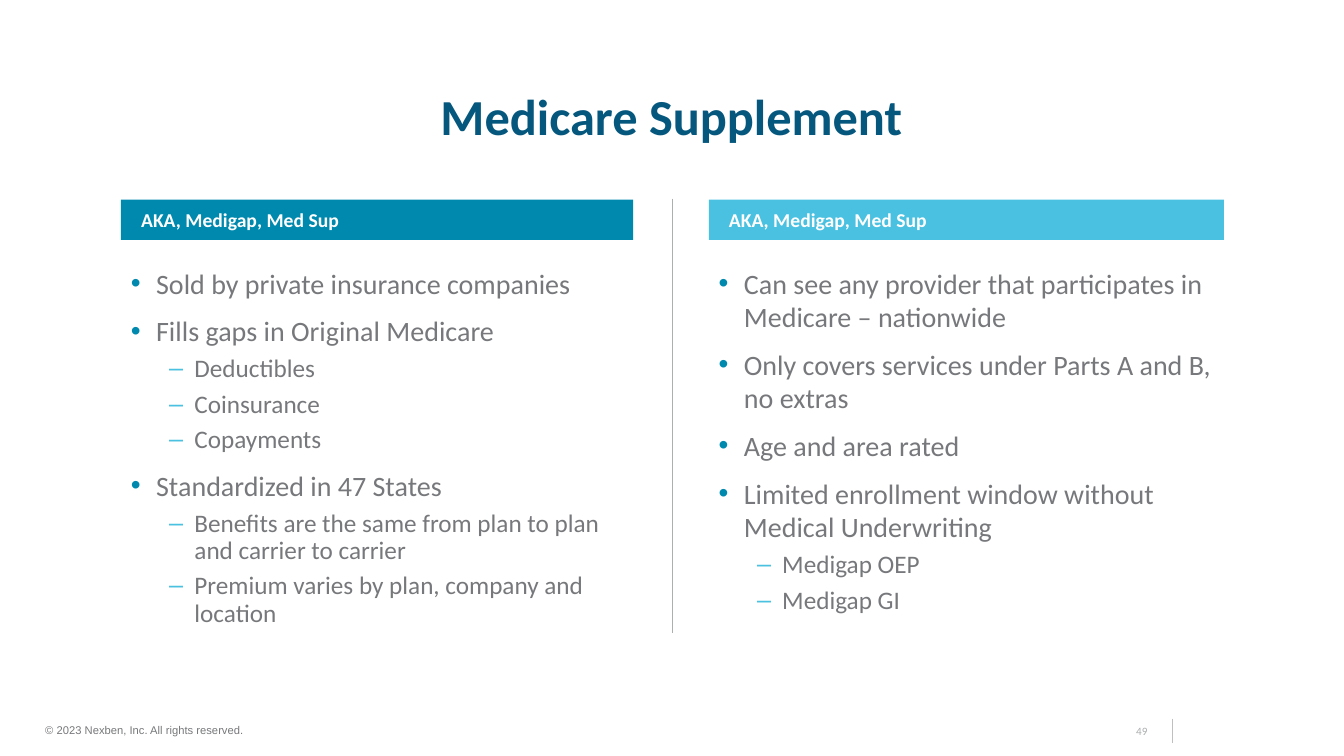
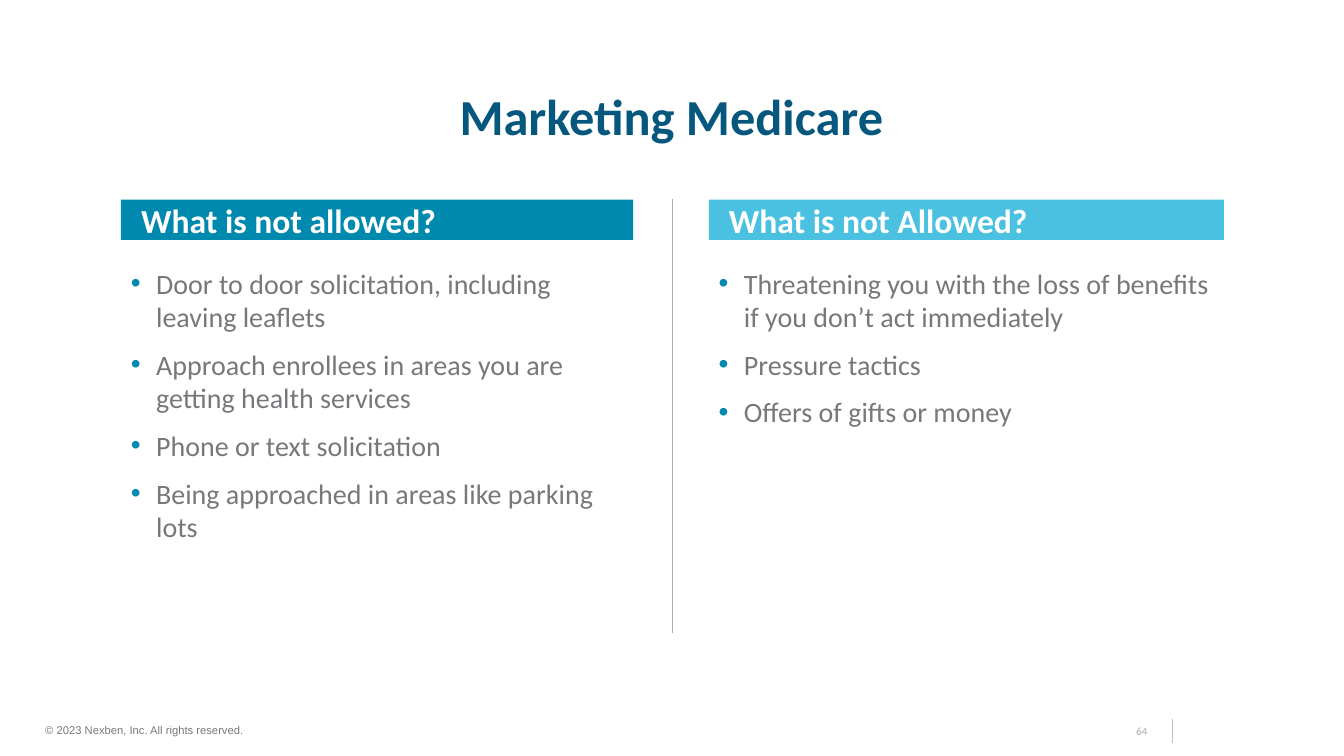
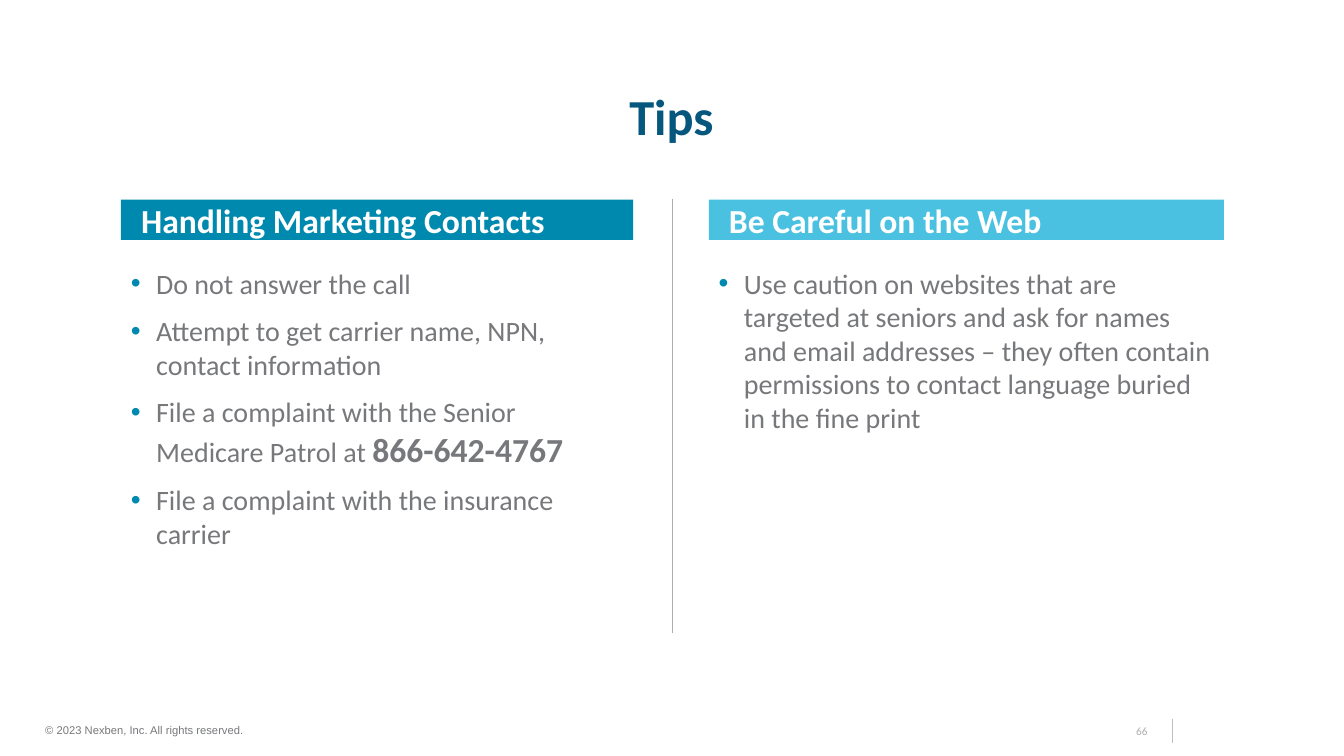
from lxml.etree import SubElement
from pptx import Presentation
from pptx.dml.color import RGBColor
from pptx.enum.shapes import MSO_CONNECTOR, MSO_SHAPE
from pptx.enum.text import MSO_ANCHOR, PP_ALIGN
from pptx.oxml.ns import qn
from pptx.util import Emu, Pt

PX = 9144  # EMU per px, 100 px to the inch

COLORS = {
    "title": "05577D",
    "left": "0089AE",
    "right": "4AC1E0",
    "body": "77787B",
    "divider": "ADAEB0",
    "footer rule": "BFBFBF",
    "white": "FFFFFF",
}

# Column x and width
COLUMNS = {"left": (120, 508), "right": (703, 511)}

# Bullet levels: character, colour, left margin, text size, paragraph format
LEVELS = [
    ("•", "left", 25, 20, {"space_before": Pt(10)}),
    ("–", "right", 63, 18, {"space_before": Pt(6), "line_spacing": 0.9}),
]
HANGING = 25


def px(length):
    return Emu(length * PX)


def rgb(name):
    return RGBColor.from_string(COLORS[name])


def apply(target, values):
    for name, value in values.items():
        setattr(target, name, value)


class Deck:
    def __init__(self):
        self.prs = Presentation()
        self.prs.slide_width, self.prs.slide_height = px(1333), px(750)
        self.slide = None

    def new_slide(self, title, number):
        self.slide = self.prs.slides.add_slide(self.prs.slide_layouts[6])
        # Footer
        self.rule(1163, 713, 737, "footer rule")
        self.label((35, 712, 226, 24), "© 2023 Nexben, Inc. All rights reserved.",
                   8, "body", font="Arial")
        self.label((1097, 713, 51, 24), number, 8, "divider",
                   {"alignment": PP_ALIGN.RIGHT})
        # Title and column divider
        self.label((41, 30, 1250, 120), title, 36, "title",
                   {"alignment": PP_ALIGN.CENTER, "line_spacing": 0.9}, bold=True)
        self.rule(667, 197, 628, "divider")

    def rule(self, x, top, bottom, color):
        line = self.slide.shapes.add_connector(
            MSO_CONNECTOR.STRAIGHT, px(x), px(top), px(x), px(bottom))
        line.line.color.rgb = rgb(color)
        line.line.width = Pt(0.5)
        SubElement(line._element.spPr, qn("a:effectLst"))

    def text_box(self, box, anchor):
        frame = self.slide.shapes.add_textbox(*map(px, box)).text_frame
        apply(frame, {"word_wrap": True, "vertical_anchor": anchor})
        return frame

    def run(self, paragraph, text, size, color, bold=False, font="Calibri"):
        run = paragraph.add_run()
        run.text = text
        apply(run.font, {"size": Pt(size), "name": font, "bold": bold})
        run.font.color.rgb = rgb(color)

    def label(self, box, text, size, color, layout=None, **style):
        paragraph = self.text_box(box, MSO_ANCHOR.BOTTOM).paragraphs[0]
        apply(paragraph, layout or {})
        self.run(paragraph, text, size, color, **style)

    def band(self, side, heading, size):
        x, width = COLUMNS[side]
        band = self.slide.shapes.add_shape(
            MSO_SHAPE.RECTANGLE, px(x), px(198), px(width), px(40))
        band.shadow.inherit = False
        band.fill.solid()
        band.fill.fore_color.rgb = rgb(side)
        band.line.fill.background()
        frame = band.text_frame
        apply(frame, {"margin_left": px(20), "word_wrap": True,
                      "vertical_anchor": MSO_ANCHOR.MIDDLE})
        frame.paragraphs[0].alignment = PP_ALIGN.LEFT
        self.run(frame.paragraphs[0], heading, size, "white", bold=True)

    def bullets(self, side, items):
        x, width = COLUMNS[side]
        frame = self.text_box((x, 259, width, 372), MSO_ANCHOR.TOP)
        for index, (level, text, *emphasis) in enumerate(items):
            paragraph = frame.paragraphs[0] if index == 0 else frame.add_paragraph()
            mark, color, margin, size, spacing = LEVELS[level]
            properties = paragraph._p.get_or_add_pPr()
            properties.set("marL", str(px(margin)))
            properties.set("indent", str(px(-HANGING)))
            bullet_color = SubElement(properties, qn("a:buClr"))
            SubElement(bullet_color, qn("a:srgbClr"), val=COLORS[color])
            SubElement(properties, qn("a:buFont"), typeface="Arial")
            SubElement(properties, qn("a:buChar"), char=mark)
            paragraph.level = level
            if index:
                apply(paragraph, spacing)
            self.run(paragraph, text, size, "body")
            for strong in emphasis:
                self.run(paragraph, strong, 24, "body", bold=True)


# Each slide: title, number, heading size, then heading and bullets per column
SLIDES = [
    ("Medicare Supplement", "49", 14, {
        "left": ("AKA, Medigap, Med Sup", [
            (0, "Sold by private insurance companies"),
            (0, "Fills gaps in Original Medicare"),
            (1, "Deductibles"),
            (1, "Coinsurance"),
            (1, "Copayments"),
            (0, "Standardized in 47 States"),
            (1, "Benefits are the same from plan to plan and carrier to carrier"),
            (1, "Premium varies by plan, company and location"),
        ]),
        "right": ("AKA, Medigap, Med Sup", [
            (0, "Can see any provider that participates in Medicare – nationwide"),
            (0, "Only covers services under Parts A and B, no extras"),
            (0, "Age and area rated"),
            (0, "Limited enrollment window without Medical Underwriting"),
            (1, "Medigap OEP"),
            (1, "Medigap GI"),
        ]),
    }),
    ("Marketing Medicare", "64", 24, {
        "left": ("What is not allowed?", [
            (0, "Door to door solicitation, including leaving leaflets"),
            (0, "Approach enrollees in areas you are getting health services"),
            (0, "Phone or text solicitation"),
            (0, "Being approached in areas like parking lots"),
        ]),
        "right": ("What is not Allowed?", [
            (0, "Threatening you with the loss of benefits if you don’t act immediately"),
            (0, "Pressure tactics"),
            (0, "Offers of gifts or money"),
        ]),
    }),
    ("Tips", "66", 24, {
        "left": ("Handling Marketing Contacts", [
            (0, "Do not answer the call"),
            (0, "Attempt to get carrier name, NPN, contact information"),
            (0, "File a complaint with the Senior Medicare Patrol at ", "866-642-4767"),
            (0, "File a complaint with the insurance carrier"),
        ]),
        "right": ("Be Careful on the Web", [
            (0, "Use caution on websites that are targeted at seniors and ask for names "
                "and email addresses – they often contain permissions to contact "
                "language buried in the fine print"),
        ]),
    }),
]


def main():
    deck = Deck()
    for title, number, heading_size, columns in SLIDES:
        deck.new_slide(title, number)
        for side, (heading, items) in columns.items():
            deck.band(side, heading, heading_size)
            deck.bullets(side, items)
    deck.prs.save("out.pptx")


if __name__ == "__main__":
    main()
